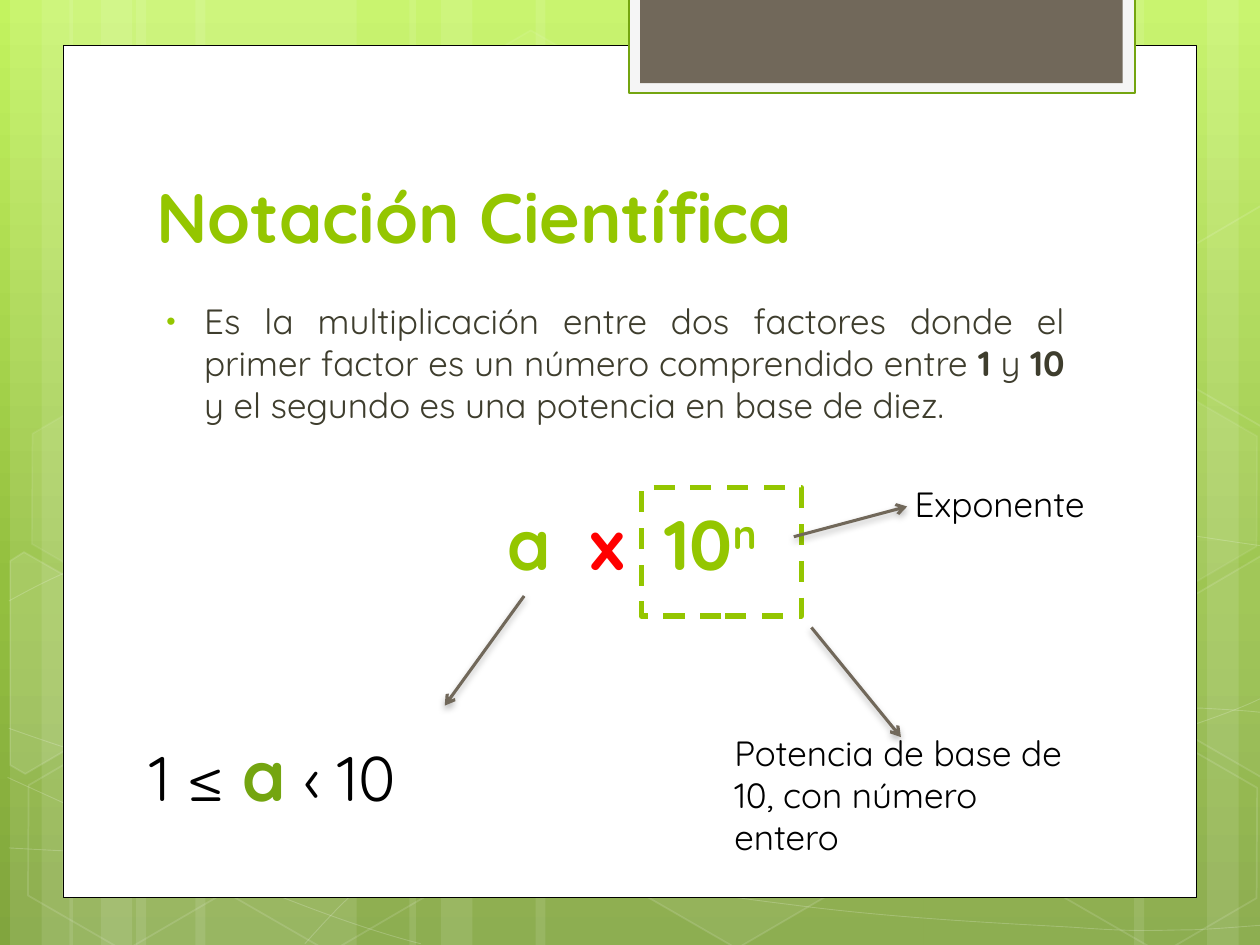
import pptx
import pptx.dml.color
import pptx.enum.dml
import pptx.enum.shapes
import pptx.enum.text
import pptx.oxml
import pptx.oxml.ns
import pptx.util
import copy
import math

Inches = pptx.util.Inches
Pt = pptx.util.Pt
qn = pptx.oxml.ns.qn
RGB = pptx.dml.color.RGBColor.from_string
SHAPES = pptx.enum.shapes.MSO_SHAPE
ANCHOR = pptx.enum.text.MSO_ANCHOR
ALIGN = pptx.enum.text.PP_ALIGN
FIT = pptx.enum.text.MSO_AUTO_SIZE
NAMESPACE = 'xmlns:a="http://schemas.openxmlformats.org/drawingml/2006/main"'
COLORS = {
    "white": "FFFFFF", "black": "000000", "lime": "94C600", "green": "74A510",
    "taupe": "71685A", "pale": "F5F5F5", "olive": "3E3D2D", "red": "FF0000",
    "sky": "C3F35F", "meadow": "93BF3F", "moss": "81A53E",
}


def paint(shape, fill=None, line=None, width=1, fill_alpha=100, line_alpha=100):
    shape.shadow.inherit = False
    for target, color, alpha in ((shape.fill, fill, fill_alpha), (shape.line.fill, line, line_alpha)):
        if color is None:
            target.background()
            continue
        target.solid()
        target.fore_color.rgb = RGB(COLORS[color])
        if alpha < 100:
            properties = shape._element.spPr
            parent = properties if target is shape.fill else properties.find(qn("a:ln"))
            opacity = pptx.oxml.parse_xml(f'<a:alpha {NAMESPACE} val="{alpha * 1000}"/>')
            parent.find(qn("a:solidFill"))[0].append(opacity)
    if line:
        shape.line.width = Pt(width)


def write(paragraph, runs):
    for text, size, color, bold, extras in runs:
        run = paragraph.add_run()
        run.text = text
        for name, value in {"name": "Quicksand", "size": Pt(size), "bold": bold}.items():
            setattr(run.font, name, value)
        run.font.color.rgb = RGB(COLORS[color])
        for name, value in extras.items():
            run._r.get_or_add_rPr().set(name, str(value))


presentation = pptx.Presentation()
presentation.slide_width, presentation.slide_height = Inches(10), Inches(7.5)
slide = presentation.slides.add_slide(presentation.slide_layouts[1])
shapes = slide.shapes
title, body = slide.placeholders[0], slide.placeholders[1]

background = slide.background.fill
background.gradient()
background.gradient_angle = 270
stop_list = next(slide._element.iter(qn("a:gsLst")))
stop_list.append(copy.deepcopy(stop_list[0]))
stops = ((0, "sky"), (0.62, "meadow"), (1, "moss"))
for stop, (position, color) in zip(background.gradient_stops, stops):
    stop.position = position
    stop.color.rgb = RGB(COLORS[color])

stripes = (
    (1.08, 1.75), (0.08, 0.5), (0.33, 0.83), (1.55, 1.75), (0.55, 0.5), (0.8, 0.83),
    (7.33, 1.75), (9.58, 0.5), (9, 0.83), (4.25, 3.08), (3.25, 0.5), (3.5, 0.83),
)
for left, width in stripes:
    stripe = shapes.add_shape(SHAPES.RECTANGLE, Inches(left), 0, Inches(width), Inches(7.5))
    stripe.rotation = 180 if left > 7 else 0
    paint(stripe, "white", fill_alpha=10)

waves = (
    ((0.07, 6.73), (0.61, 6.76), (1.15, 6.79), (1.9, 6.78), (2.65, 6.77), (3.58, 6.75), (4.58, 6.65),
     (5.58, 6.55), (7, 6.36), (7.92, 6.17), (8.83, 5.98), (9.77, 5.68), (10.07, 5.51)),
    ((0.07, 4.77), (0.36, 4.61), (0.65, 4.46), (1.21, 4.31), (1.78, 4.16), (2.59, 3.94), (3.47, 3.87),
     (4.36, 3.8), (5.44, 3.79), (6.54, 3.87), (7.64, 3.95), (9.47, 4.26), (10.07, 4.34)),
    ((0.06, 6.17), (1.27, 6.72), (2.47, 7.27), (3.34, 7.49)),
    ((0.07, 5.78), (0.38, 5.89), (0.7, 6), (1.28, 6.16), (1.86, 6.31), (2.73, 6.56), (3.57, 6.73),
     (4.4, 6.9), (5.45, 7.08), (6.28, 7.18), (7.11, 7.29), (8, 7.33), (8.53, 7.36),
     (9.05, 7.4), (9.19, 7.38), (9.45, 7.38), (9.71, 7.37), (9.89, 7.35), (10.07, 7.34)),
    ((2.42, 7.49), (2.6, 7.29), (2.78, 7.09), (3.02, 6.91), (3.26, 6.73), (3.6, 6.53), (3.88, 6.39),
     (4.16, 6.25), (4.33, 6.19), (4.7, 6.09), (5.06, 5.99), (5.73, 5.85), (6.08, 5.78),
     (6.44, 5.71), (6.49, 5.71), (6.8, 5.69), (7.11, 5.66), (7.6, 5.63), (7.94, 5.62),
     (8.29, 5.61), (8.86, 5.62), (8.86, 5.62), (9.08, 5.62), (9.31, 5.62), (9.53, 5.62),
     (9.71, 5.63), (9.88, 5.64), (9.97, 5.65), (10.06, 5.66), (10.03, 5.65), (10.06, 5.66)),
)
for wave in waves:
    points = [tuple(map(Inches, point)) for point in wave]
    builder = shapes.build_freeform(*points[0])
    builder.add_line_segments(points[1:], close=False)
    curve = builder.convert_to_shape()
    segments = list(curve._element.iter(qn("a:lnTo")))
    for start in range(0, len(segments), 3):
        bezier = pptx.oxml.parse_xml(f'<a:cubicBezTo {NAMESPACE}/>')
        segments[start].addprevious(bezier)
        for segment in segments[start:start + 3]:
            bezier.append(segment[0])
            segment.getparent().remove(segment)
    paint(curve, line="white", width=0.5, line_alpha=20)

hexagons = (
    (3.34, 0.36, 4, 8), (4.97, 5.89, 6, 12), (0.11, 5.91, 0, 12), (0.14, 3.12, 7, 8), (1.74, 5.92, 0, 12),
    (7.53, 4.53, 10, 12), (8.34, 5.93, 0, 12), (8.34, 3.14, 7, 8),
)
for left, top, fill_alpha, line_alpha in hexagons:
    hexagon = shapes.add_shape(SHAPES.HEXAGON, Inches(left), Inches(top), Inches(1.75), Inches(1.52))
    hexagon.rotation = 30
    hexagon.adjustments[0] = 0.285
    paint(hexagon, "white" if fill_alpha else None, "white", 1, fill_alpha, line_alpha)

right_edge = ((9.26, 4.85), (10.01, 4.41), (10.09, 4.46), (10.09, 6.13), (10.02, 6.17), (9.26, 5.73))
cut_hexagons = (
    (((0.08, 4.45), (0.19, 4.38), (0.96, 4.82), (0.95, 5.7), (0.2, 6.14), (0.08, 6.07)), (0.36, 5.35), 10),
    (right_edge, (9.85, 5.2), 4),
    (tuple((x, y - 2.78) for x, y in right_edge), (9.85, 2.41), 0),
)
cosine, sine = math.cos(math.radians(30)), math.sin(math.radians(30))
for outline, (center_x, center_y), fill_alpha in cut_hexagons:
    offsets = [(x - center_x, y - center_y) for x, y in outline]
    points = [(Inches(center_x + x * cosine + y * sine), Inches(center_y - x * sine + y * cosine))
              for x, y in offsets]
    builder = shapes.build_freeform(*points[0])
    builder.add_line_segments(points[1:], close=True)
    cut_hexagon = builder.convert_to_shape()
    cut_hexagon.rotation = 30
    paint(cut_hexagon, "white" if fill_alpha else None, "white", 1, fill_alpha, 12)

panels = (
    (0.5, 0.36, 9, 6.76, "white", "black", 0.5),
    (4.99, -0.02, 4.02, 0.76, "pale", "green", 1.25),
    (5.08, -0.02, 3.83, 0.68, "taupe", None, 0),
)
for left, top, width, height, fill, line, line_width in panels:
    panel = shapes.add_shape(SHAPES.RECTANGLE, Inches(left), Inches(top), Inches(width), Inches(height))
    paint(panel, fill, line, line_width)

for placeholder, box, anchor, alignment in (
    (title, (1.14, 0.84, 7.68, 1.25), ANCHOR.BOTTOM, ALIGN.LEFT),
    (body, (1.14, 2.33, 7.41, 1.21), ANCHOR.TOP, ALIGN.JUSTIFY),
):
    for name, value in zip(("left", "top", "width", "height"), box):
        setattr(placeholder, name, Inches(value))
    placeholder.text_frame.auto_size = FIT.NONE
    placeholder.text_frame.vertical_anchor = anchor
    placeholder.text_frame.paragraphs[0].alignment = alignment
    shapes._spTree.append(placeholder._element)

write(title.text_frame.paragraphs[0], [("Notación Científica", 40, "lime", True, {})])
definition = body.text_frame.paragraphs[0]
definition.space_before = Pt(4)
write(definition, [
    ("Es la multiplicación entre dos factores donde el primer factor es un número comprendido entre ",
     20, "olive", False, {}),
    ("1", 20, "olive", True, {}),
    (" y ", 20, "olive", False, {}),
    ("10", 20, "olive", True, {}),
    (" y el segundo es una potencia en base de diez.", 20, "olive", False, {}),
])
properties = definition._p.get_or_add_pPr()
properties.set("marL", str(Inches(0.38)))
properties.set("indent", str(Inches(-0.3)))
for bullet in (f'<a:buClr {NAMESPACE}><a:srgbClr val="{COLORS["lime"]}"/></a:buClr>',
               f'<a:buSzPct {NAMESPACE} val="76000"/>', f'<a:buFont {NAMESPACE} typeface="Arial"/>',
               f'<a:buChar {NAMESPACE} char="•"/>'):
    properties.append(pptx.oxml.parse_xml(bullet))

gap = (" ", 40, "lime", True, {"spc": 1130})
labels = (
    ((1.25, 4.11, 7.68, 1.25), ANCHOR.BOTTOM, ALIGN.CENTER, FIT.NONE, 0.24, 0.72, [
        ("a", 40, "lime", True, {}), gap, ("x", 40, "red", True, {}), gap,
        ("10", 40, "lime", True, {}), ("n", 40, "lime", True, {"baseline": 30000})]),
    ((1.09, 5.76, 2.83, 0.77), ANCHOR.TOP, ALIGN.LEFT, FIT.SHAPE_TO_FIT_TEXT, 0.1, 0.05, [
        ("1 ≤ ", 36, "black", False, {}), ("a", 40, "green", True, {}), (" ‹ 10", 36, "black", False, {})]),
    ((5.73, 5.76, 2.83, 1.11), ANCHOR.TOP, ALIGN.LEFT, FIT.SHAPE_TO_FIT_TEXT, 0.1, 0.05, [
        ("Potencia de base de 10, con número entero", 20, "black", False, {})]),
    ((7.16, 3.78, 2.02, 0.44), ANCHOR.TOP, ALIGN.LEFT, FIT.SHAPE_TO_FIT_TEXT, 0.1, 0.05, [
        ("Exponente", 20, "black", False, {})]),
)
for box, anchor, alignment, fit, right_margin, bottom_margin, runs in labels:
    frame = shapes.add_textbox(*map(Inches, box)).text_frame
    frame_format = {"word_wrap": True, "vertical_anchor": anchor, "auto_size": fit,
                    "margin_right": Inches(right_margin), "margin_bottom": Inches(bottom_margin)}
    for name, value in frame_format.items():
        setattr(frame, name, value)
    frame.paragraphs[0].alignment = alignment
    write(frame.paragraphs[0], runs)

power_frame = shapes.add_shape(SHAPES.RECTANGLE, Inches(5.09), Inches(3.87), Inches(1.27), Inches(1.02))
paint(power_frame, line="lime", width=3)
power_frame.line.dash_style = pptx.enum.dml.MSO_LINE.DASH

for ends in ((6.3, 4.26, 7.2, 4.02), (4.16, 4.73, 3.53, 5.6), (6.44, 4.98, 7.15, 5.85)):
    arrow = shapes.add_connector(pptx.enum.shapes.MSO_CONNECTOR.STRAIGHT, *map(Inches, ends))
    arrow.line.color.rgb = RGB(COLORS["taupe"])
    arrow.line.width = Pt(1.75)
    arrow.line._get_or_add_ln().append(pptx.oxml.parse_xml(f'<a:tailEnd {NAMESPACE} type="arrow"/>'))
    arrow._element.spPr.append(pptx.oxml.parse_xml(
        f'<a:effectLst {NAMESPACE}><a:outerShdw blurRad="{Pt(4)}" dist="{Pt(2)}" dir="5400000" rotWithShape="0">'
        f'<a:srgbClr val="{COLORS["black"]}"><a:alpha val="28000"/></a:srgbClr></a:outerShdw></a:effectLst>'))

presentation.save("out.pptx")
